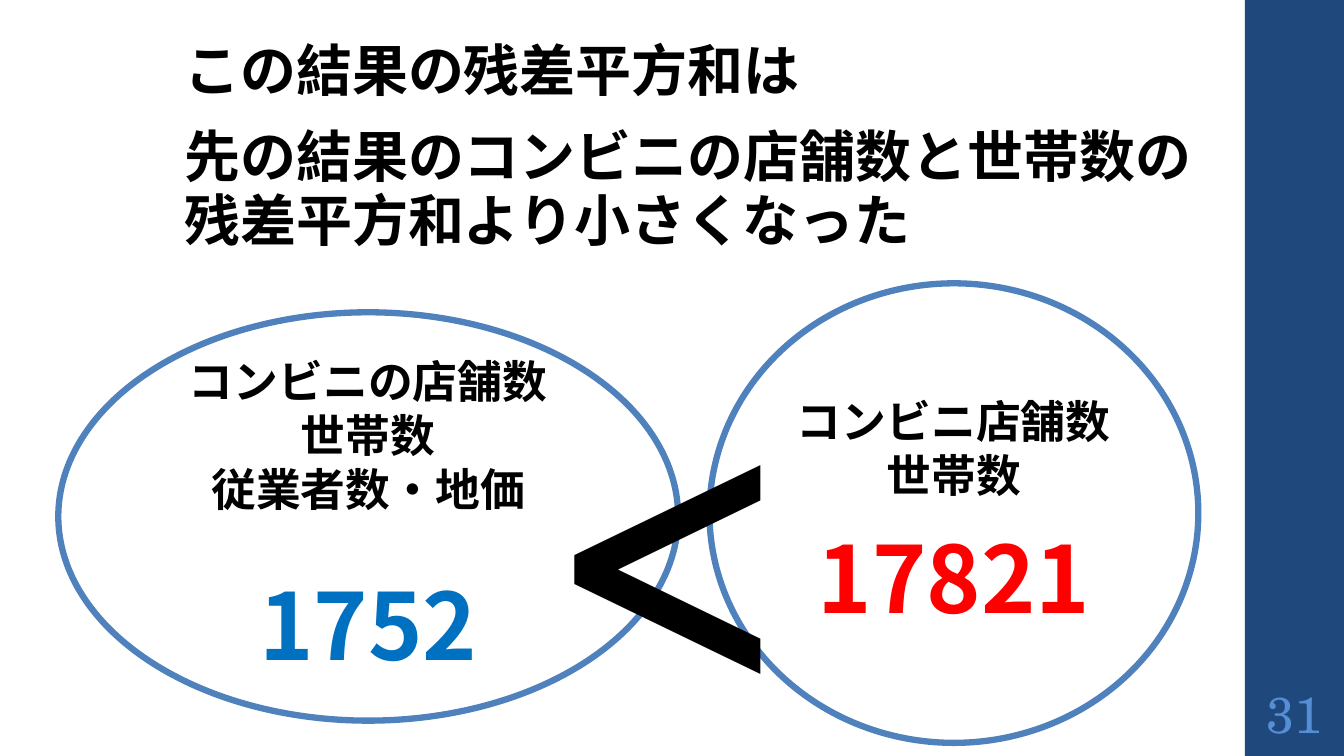
import dataclasses

import pptx
import pptx.dml.color
import pptx.enum.shapes
import pptx.enum.text
import pptx.oxml.ns
import pptx.util
from lxml import etree

Cm, Pt = pptx.util.Cm, pptx.util.Pt
Align, Anchor = pptx.enum.text.PP_ALIGN, pptx.enum.text.MSO_ANCHOR
Shape = pptx.enum.shapes.MSO_SHAPE


@dataclasses.dataclass(frozen=True)
class Theme:
    sans: str = "Noto Sans CJK JP"
    serif: str = "TeX Gyre Schola"
    black: str = "000000"
    white: str = "FFFFFF"
    navy: str = "1F497D"
    outline: str = "4F81BD"
    red: str = "FF0000"
    blue: str = "0070C0"
    pale: str = "558ED5"
    heading: int = 40
    label: int = 32
    value: int = 66
    sign: int = 287
    number: int = 36


THEME = Theme()
PAGE_WIDTH, PAGE_HEIGHT = 33.87, 19.05
BAND_LEFT, BAND_WIDTH = 31.37, 2.5

HEADING = ["この結果の残差平方和は", "先の結果のコンビニの店舗数と世帯数の残差平方和より小さくなった"]
HEADING_BOX = (4.39, 0.89, 26.87, 5.64)
GROUPS = [
    {"box": (17.88, 7.14, 12.32, 11.58), "labels": ["コンビニ店舗数", "世帯数"],
     "value": "17821", "color": THEME.red, "gap": 14},
    {"box": (1.47, 7.87, 15.62, 10.29), "labels": ["コンビニの店舗数", "世帯数", "従業者数・地価"],
     "value": "1752", "color": THEME.blue, "gap": 38},
]
SIGN, SIGN_BOX = "<", (13.61, 6.65, 6.53, 12.52)
NUMBER, NUMBER_BOX = "31", (BAND_LEFT, 17.15, BAND_WIDTH, 1.65)


def rgb(value):
    return pptx.dml.color.RGBColor.from_string(value)


def place(shape, box):
    shape.left, shape.top, shape.width, shape.height = map(Cm, box)


def add_panel(page, kind, box, fill, line=None):
    panel = page.shapes.add_shape(kind, *map(Cm, box))
    panel.shadow.inherit = False
    panel.fill.solid()
    panel.fill.fore_color.rgb = rgb(fill)
    if line:
        panel.line.color.rgb = rgb(line)
        panel.line.width = Pt(4.5)
    else:
        panel.line.fill.background()
    return panel


def write(frame, lines, align, font, bold=False):
    frame.word_wrap = True
    for index, (text, size, color) in enumerate(lines):
        para = frame.paragraphs[0] if index == 0 else frame.add_paragraph()
        para.text = text
        para.alignment = align
        para.font.name = font
        para.font.size = Pt(size)
        para.font.bold = bold
        para.font.color.rgb = rgb(color)
        latin = para.font._element.find(pptx.oxml.ns.qn("a:latin"))
        east_asian = etree.Element(pptx.oxml.ns.qn("a:ea"), typeface=font)
        latin.addnext(east_asian)


def add_heading(page):
    title = page.shapes.title
    place(title, HEADING_BOX)
    frame = title.text_frame
    frame.auto_size = pptx.enum.text.MSO_AUTO_SIZE.NONE
    frame.vertical_anchor = Anchor.TOP
    write(frame, [(text, THEME.heading, THEME.black) for text in HEADING],
          Align.LEFT, THEME.sans, bold=True)
    for para in frame.paragraphs:
        para.line_spacing = 0.95
        para.space_before, para.space_after = Pt(14), Pt(2)


def add_group(page, group):
    ellipse = add_panel(page, Shape.OVAL, group["box"], THEME.white, THEME.outline)
    frame = ellipse.text_frame
    frame.vertical_anchor = Anchor.MIDDLE
    lines = [(text, THEME.label, THEME.black) for text in group["labels"]]
    lines.append((group["value"], THEME.value, group["color"]))
    write(frame, lines, Align.CENTER, THEME.sans, bold=True)
    frame.paragraphs[-1].space_before = Pt(group["gap"])


def add_text(page, box, text, size, color, align):
    frame = page.shapes.add_textbox(*map(Cm, box)).text_frame
    write(frame, [(text, size, color)], align, THEME.serif)
    return frame


def main():
    deck = pptx.Presentation()
    deck.slide_width, deck.slide_height = Cm(PAGE_WIDTH), Cm(PAGE_HEIGHT)
    page = deck.slides.add_slide(deck.slide_layouts[5])
    add_panel(page, Shape.RECTANGLE, (BAND_LEFT, 0, BAND_WIDTH, PAGE_HEIGHT), THEME.navy)
    for group in GROUPS:
        add_group(page, group)
    add_text(page, SIGN_BOX, SIGN, THEME.sign, THEME.black, Align.LEFT)
    add_heading(page)
    number = add_text(page, NUMBER_BOX, NUMBER, THEME.number, THEME.pale, Align.CENTER)
    number.vertical_anchor = Anchor.MIDDLE
    deck.save("out.pptx")


if __name__ == "__main__":
    main()
